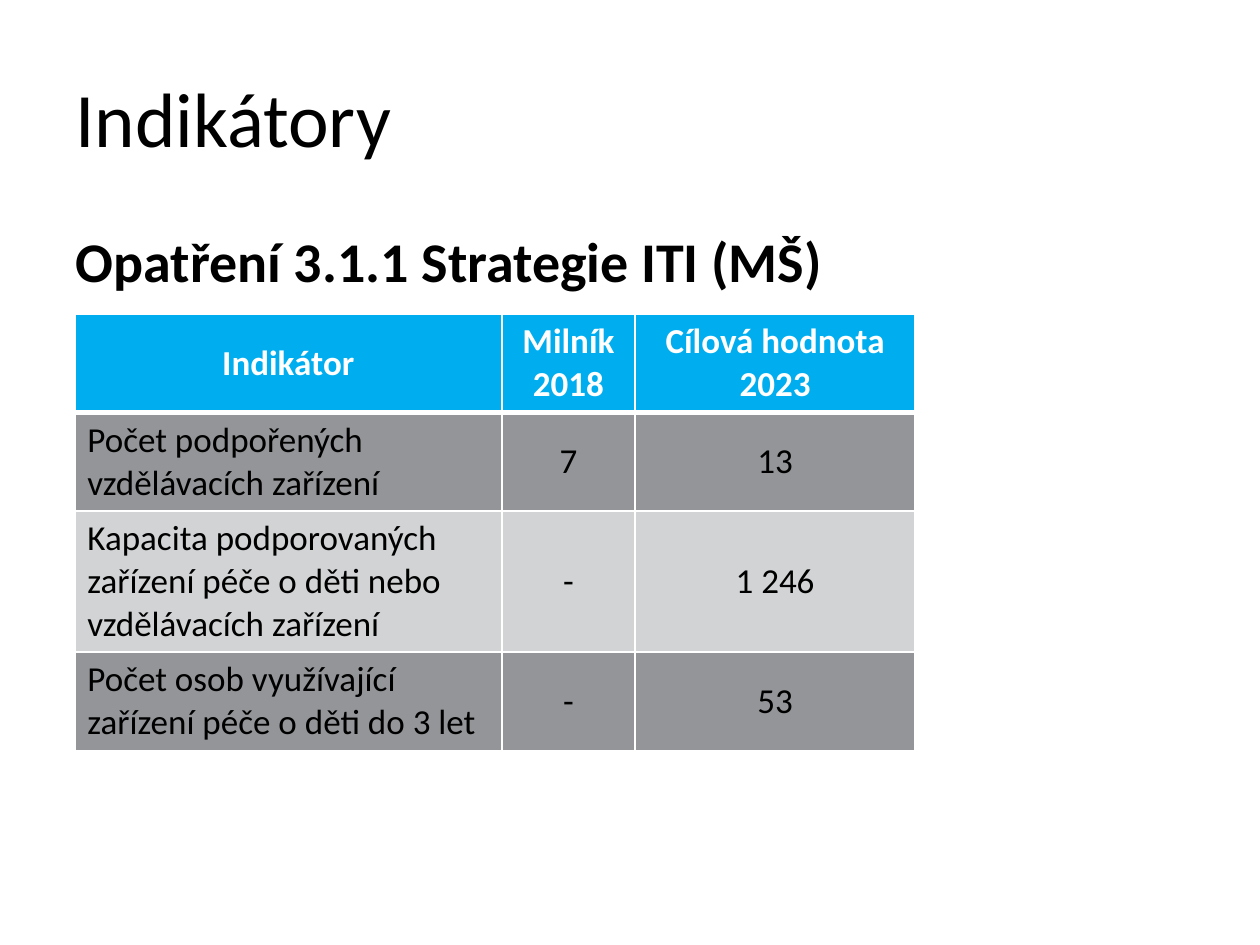
from dataclasses import dataclass

from lxml import etree
from pptx import Presentation
from pptx.dml.color import RGBColor
from pptx.enum.text import MSO_ANCHOR, PP_ALIGN
from pptx.oxml.ns import qn
from pptx.util import Pt

LEFT, CENTER = PP_ALIGN.LEFT, PP_ALIGN.CENTER
MIDDLE = MSO_ANCHOR.MIDDLE
FONT = "Calibri"
BLACK, WHITE = "000000", "FFFFFF"
HEADER_BLUE, DARK_GRAY, LIGHT_GRAY = "00AEEF", "939598", "D1D3D4"
THIN, THICK = 1, 3
COLUMN_WIDTHS = (244, 76.25, 160)


@dataclass(frozen=True)
class IndicatorRow:
    values: tuple[str, str, str]
    height: float


HEADER = IndicatorRow(("Indikátor", "Milník 2018", "Cílová hodnota 2023"), 56)
INDICATORS = (
    IndicatorRow(("Počet podpořených vzdělávacích zařízení", "7", "13"), 56),
    IndicatorRow(("Kapacita podporovaných zařízení péče o děti nebo "
                  "vzdělávacích zařízení", "-", "1 246"), 80.5),
    IndicatorRow(("Počet osob využívající zařízení péče o děti do 3 let",
                  "-", "53"), 56),
)


def rgb(color: str) -> RGBColor:
    return RGBColor.from_string(color)


def format_paragraph(paragraph, size: float, color: str, bold: bool = False,
                     align=LEFT) -> None:
    paragraph.alignment = align
    font = paragraph.font
    font.name, font.size, font.bold = FONT, Pt(size), bold
    font.color.rgb = rgb(color)


def place(shape, left: float, top: float, width: float, height: float) -> None:
    shape.left, shape.top = Pt(left), Pt(top)
    shape.width, shape.height = Pt(width), Pt(height)


def add_borders(cell, top: float, bottom: float) -> None:
    """Draw white borders; must run before the fill, which follows them in the XML."""
    properties = cell._tc.get_or_add_tcPr()
    for side, width in (("L", THIN), ("R", THIN), ("T", top), ("B", bottom)):
        line = etree.SubElement(properties, qn(f"a:ln{side}"), w=str(Pt(width)))
        solid = etree.SubElement(line, qn("a:solidFill"))
        etree.SubElement(solid, qn("a:srgbClr"), val=WHITE)


def add_indicator_table(slide, left: float, top: float) -> None:
    rows = (HEADER, *INDICATORS)
    table = slide.shapes.add_table(
        len(rows), len(COLUMN_WIDTHS), Pt(left), Pt(top),
        Pt(sum(COLUMN_WIDTHS)), Pt(sum(row.height for row in rows)),
    ).table
    for column, width in zip(table.columns, COLUMN_WIDTHS):
        column.width = Pt(width)
    for row_index, row in enumerate(rows):
        table.rows[row_index].height = Pt(row.height)
        is_header = row_index == 0
        band = DARK_GRAY if row_index % 2 else LIGHT_GRAY
        for column_index, value in enumerate(row.values):
            cell = table.cell(row_index, column_index)
            cell.text = value
            cell.vertical_anchor = MIDDLE
            add_borders(cell, THICK if row_index == 1 else THIN,
                        THICK if is_header else THIN)
            cell.fill.solid()
            cell.fill.fore_color.rgb = rgb(HEADER_BLUE if is_header else band)
            format_paragraph(
                cell.text_frame.paragraphs[0], 20,
                WHITE if is_header else BLACK, is_header,
                CENTER if is_header or column_index else LEFT)


def main() -> None:
    presentation = Presentation()
    presentation.slide_width, presentation.slide_height = Pt(720), Pt(540)
    slide = presentation.slides.add_slide(presentation.slide_layouts[1])

    title, body = slide.placeholders
    place(title, 36, 21.6, 648, 90)
    title.text_frame.text = "Indikátory"
    title.text_frame.vertical_anchor = MIDDLE
    format_paragraph(title.text_frame.paragraphs[0], 44, BLACK)

    place(body, 36, 126, 648, 356.4)
    body.text_frame.text = "Opatření 3.1.1 Strategie ITI (MŠ)"
    measure = body.text_frame.paragraphs[0]
    format_paragraph(measure, 32, BLACK, bold=True)
    properties = measure._p.get_or_add_pPr()
    properties.set("marL", "0")
    properties.set("indent", "0")
    properties.insert_element_before(
        etree.Element(qn("a:buNone")), "a:tabLst", "a:defRPr", "a:extLst")

    add_indicator_table(slide, 42.75, 179.5)
    presentation.save("out.pptx")


if __name__ == "__main__":
    main()
